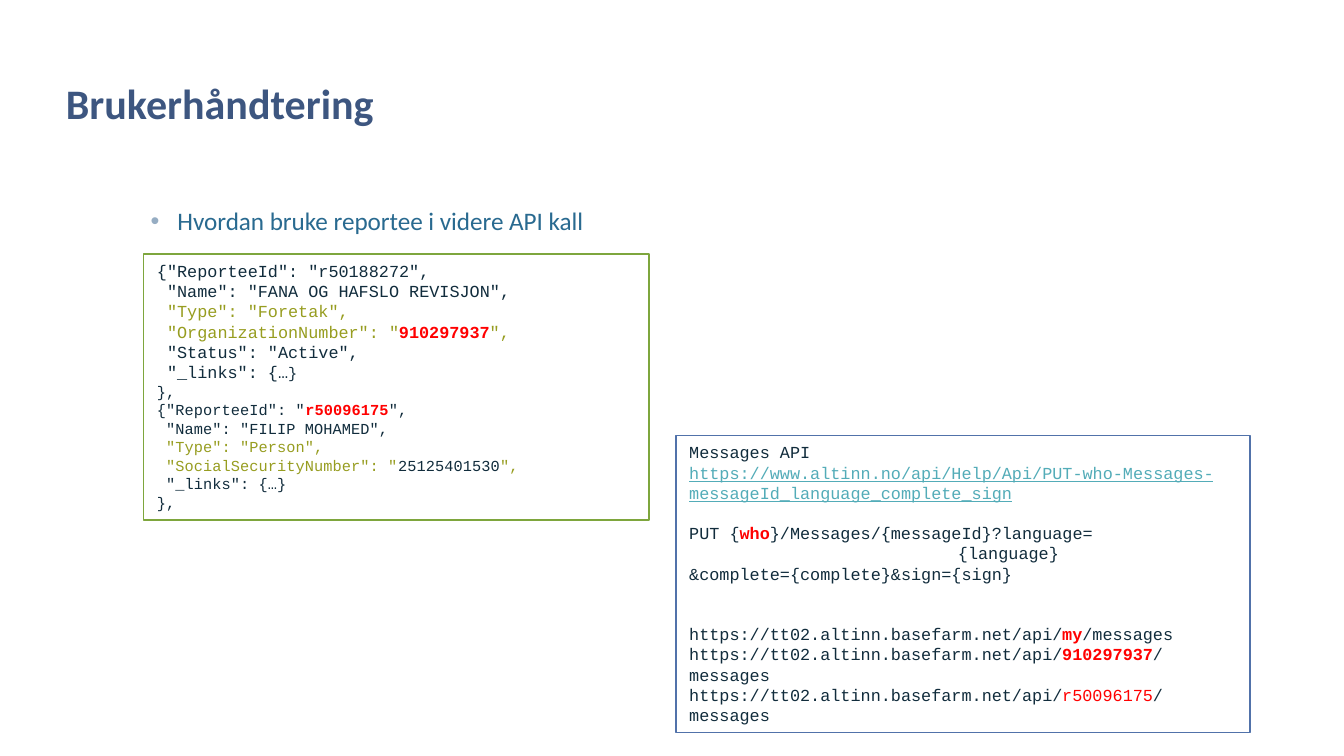
import pptx
import pptx.util
import pptx.dml.color
import pptx.enum.text
import pptx.enum.shapes
import pptx.oxml.ns
import lxml.etree

Inches = pptx.util.Inches
Pt = pptx.util.Pt
name = pptx.oxml.ns.qn

COLORS = {
    "title": "3D5680",
    "body": "296A90",
    "bullet": "96ADC3",
    "ink": "112C3C",
    "olive": "979D20",
    "red": "FF0000",
    "link": "53ACB8",
    "green": "7EA63D",
    "blue": "5172AA",
}

BIG, SMALL = 9, 8.25

FIRM = [
    [('{"ReporteeId": "r50188272",', "ink")],
    [(' "Name": "FANA OG HAFSLO REVISJON",', "ink")],
    [(' "Type": "Foretak",', "olive")],
    [(' "OrganizationNumber": "', "olive"), ("910297937", "red", "bold"), ('",', "olive")],
    [(' "Status": "Active",', "ink")],
    [(' "_links": {…', "ink"), ("}", "ink", "small")],
]

PERSON = [
    [("},", "ink")],
    [('{"ReporteeId": "', "ink"), ("r50096175", "red", "bold"), ('",', "ink")],
    [(' "Name": "FILIP MOHAMED",', "ink")],
    [(' "Type": "Person",', "olive")],
    [(' "SocialSecurityNumber": "', "olive"), ("25125401530", "ink"), ('",', "olive")],
    [(' "_links": {…}', "ink")],
    [("},", "ink")],
]

HELP = "https://www.altinn.no/api/Help/Api/PUT-who-Messages-messageId_language_complete_sign"
BASE = "https://tt02.altinn.basefarm.net/api/"
USERS = [("my", "red", "bold"), ("910297937", "red", "bold"), ("r50096175", "red")]

CALLS = [
    [("Messages API", "ink")],
    [(HELP, "link", "under")],
    [
        ("PUT {", "ink"),
        ("who", "red", "bold"),
        ("}/Messages/{messageId}?language=\v\t\t{language}&complete={complete}&sign={sign}", "ink"),
    ],
] + [[(BASE, "ink"), user, ("/messages", "ink")] for user in USERS]


def color(tone):
    return pptx.dml.color.RGBColor.from_string(COLORS[tone])


def place(shape, area):
    shape.left, shape.top, shape.width, shape.height = map(Inches, area)


def inset(frame, side, edge):
    frame.margin_left = frame.margin_right = Inches(side)
    frame.margin_top = frame.margin_bottom = Inches(edge)
    frame.auto_size = pptx.enum.text.MSO_AUTO_SIZE.NONE
    frame.word_wrap = True


def style(run, face, size, tone, bold=False):
    run.font.name = face
    run.font.size = Pt(size)
    run.font.bold = bold
    run.font.color.rgb = color(tone)


def mark(par, left, hang):
    props = par._p.get_or_add_pPr()
    props.set("marL", str(Inches(left)))
    props.set("indent", str(Inches(-hang)))
    fill = lxml.etree.SubElement(props, name("a:buClr"))
    lxml.etree.SubElement(fill, name("a:srgbClr"), val=COLORS["bullet"])
    lxml.etree.SubElement(props, name("a:buFont"), typeface="Arial")
    lxml.etree.SubElement(props, name("a:buChar"), char="•")


def tabs(par, stops):
    props = par._p.get_or_add_pPr()
    group = lxml.etree.SubElement(props, name("a:tabLst"))
    for stop in stops:
        lxml.etree.SubElement(group, name("a:tab"), pos=str(Inches(stop)), algn="l")


def title(slide, area):
    shape = slide.shapes.title
    place(shape, area)
    frame = shape.text_frame
    inset(frame, 0, 0)
    frame.vertical_anchor = pptx.enum.text.MSO_ANCHOR.BOTTOM
    frame.text = "Brukerhåndtering"
    par = frame.paragraphs[0]
    par.alignment = pptx.enum.text.PP_ALIGN.LEFT
    par.line_spacing = Pt(25.5)
    style(par.runs[0], "Calibri", 22.5, "title", True)


def body(slide, area):
    shape = slide.placeholders[1]
    place(shape, area)
    frame = shape.text_frame
    inset(frame, 0, 0.04)
    frame.text = "Hvordan bruke reportee i videre API kall"
    par = frame.paragraphs[0]
    par.level = 1
    par.line_spacing = 0.9
    par.space_before = Pt(0)
    par.space_after = Pt(4)
    mark(par, 0.42, 0.2)
    style(par.runs[0], "Calibri", 13.5, "body")


def code(slide, area, edge, groups):
    shape = slide.shapes.add_shape(
        pptx.enum.shapes.MSO_SHAPE.RECTANGLE, *map(Inches, area))
    shape.shadow.inherit = False
    shape.fill.background()
    shape.line.color.rgb = color(edge)
    shape.line.width = Pt(0.75)
    frame = shape.text_frame
    inset(frame, 0.1, 0.05)
    frame.vertical_anchor = pptx.enum.text.MSO_ANCHOR.TOP
    rows = [(size, parts) for size, lines in groups for parts in lines]
    for index, (size, parts) in enumerate(rows):
        par = frame.add_paragraph() if index else frame.paragraphs[0]
        par.alignment = pptx.enum.text.PP_ALIGN.LEFT
        for text, tone, *flags in parts:
            for step, piece in enumerate(text.split("\v")):
                if step:
                    par.add_line_break()
                run = par.add_run()
                run.text = piece
                fit = SMALL if "small" in flags else size
                style(run, "Courier New", fit, tone, "bold" in flags)
                run.font.underline = "under" in flags
    return frame


def main():
    deck = pptx.Presentation()
    deck.slide_width = Inches(10)
    deck.slide_height = deck.slide_width * 9 // 16
    slide = deck.slides.add_slide(deck.slide_layouts[1])
    title(slide, (0.49, 0, 7.89, 0.95))
    body(slide, (0.9, 1.51, 8.25, 0.28))
    code(slide, (1.07, 1.89, 3.76, 1.98), "green", [(BIG, FIRM), (SMALL, PERSON)])
    calls = code(slide, (5.03, 3.24, 4.27, 2.21), "blue", [(BIG, CALLS)])
    put, first = calls.paragraphs[2:4]
    tabs(put, (1, 2))
    put.space_before = Pt(10.8)
    first.space_before = Pt(21.6)
    deck.save("out.pptx")


if __name__ == "__main__":
    main()
